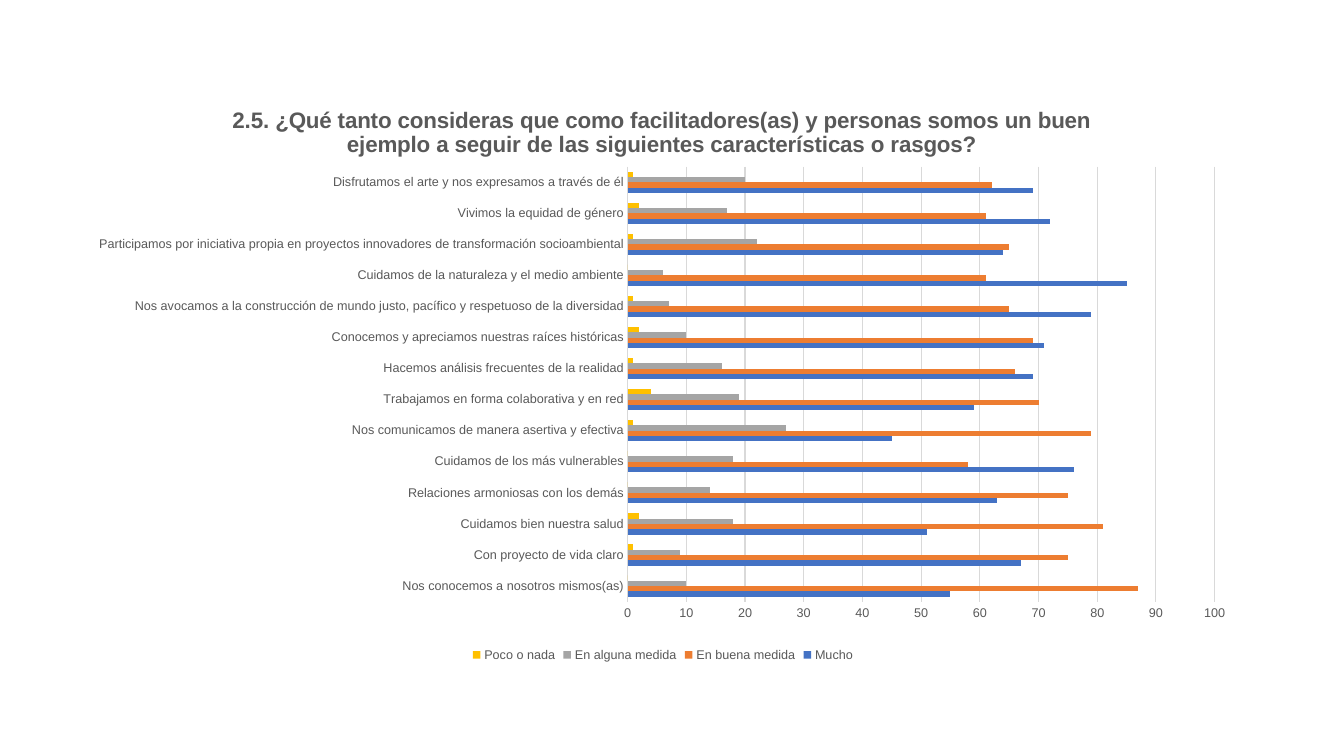
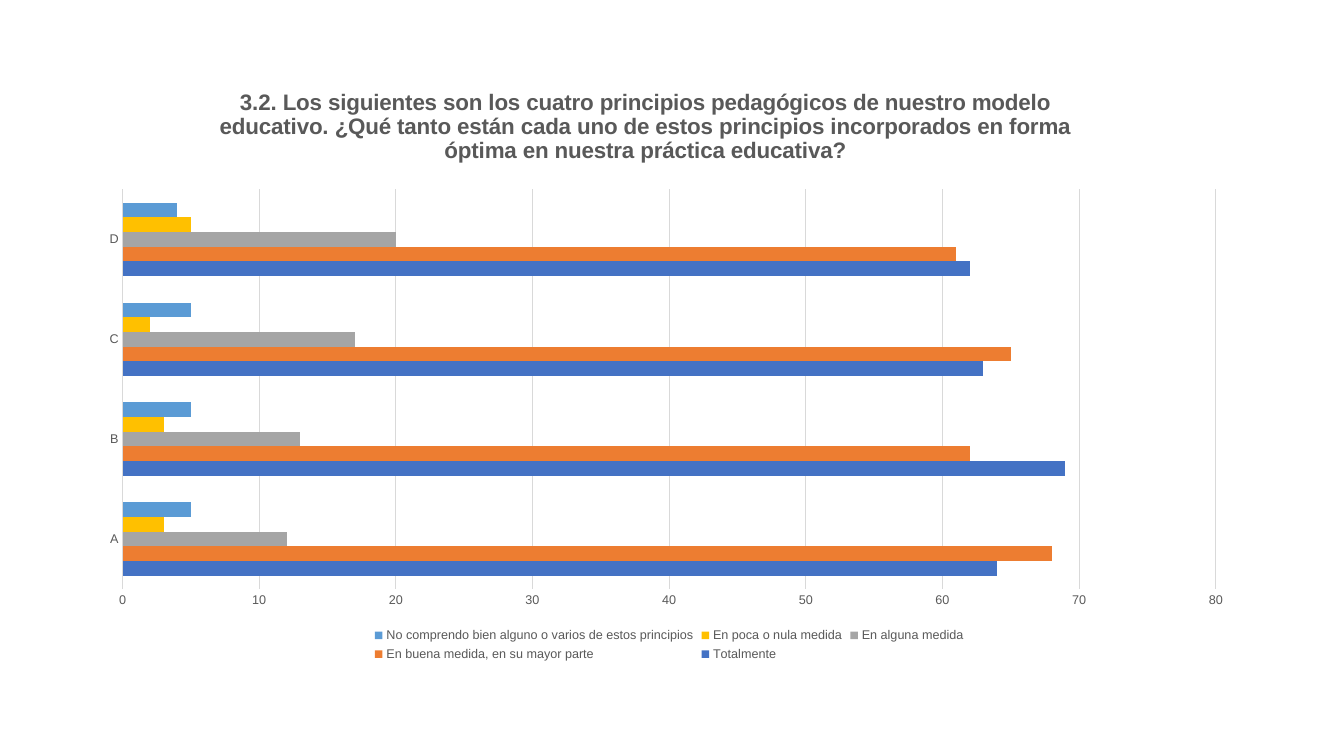
import pptx
import pptx.chart.data
import pptx.dml.color
import pptx.enum.chart
import pptx.oxml
import pptx.oxml.ns
import pptx.util
from pptx.util import Cm

FONT = "Arial"
TEXT = "595959"
RULE = "D9D9D9"
SERIES_COLORS = ["4472C4", "ED7D31", "A5A5A5", "FFC000", "5B9BD5"]


def color(hex_code):
    return pptx.dml.color.RGBColor.from_string(hex_code)


def style_font(font, size, hex_code, bold=False):
    font.name = FONT
    font.size = pptx.util.Pt(size)
    font.bold = bold
    font.color.rgb = color(hex_code)


def style_rule(line):
    line.color.rgb = color(RULE)
    line.width = pptx.util.Pt(0.75)


def set_layout(parent, index, target=None, **fractions):
    for old in parent.findall(pptx.oxml.ns.qn("c:layout")):
        parent.remove(old)
    parts = [f'<c:layoutTarget val="{target}"/>'] if target else []
    parts += [f'<c:{edge}Mode val="edge"/>' for edge in ("x", "y")]
    parts += [f'<c:{key} val="{value}"/>' for key, value in fractions.items()]
    parent.insert(index, pptx.oxml.parse_xml(
        f'<c:layout {pptx.oxml.ns.nsdecls("c")}><c:manualLayout>'
        + "".join(parts) + "</c:manualLayout></c:layout>"))


class SurveyDeck:
    def __init__(self):
        self.deck = pptx.Presentation()
        self.deck.slide_width = Cm(33.87)
        self.deck.slide_height = Cm(19.05)
        self.slide = None

    def add_slide(self):
        self.slide = self.deck.slides.add_slide(self.deck.slide_layouts[6])

    def add_bars(self, box, categories, answers, maximum, plot_area):
        data = pptx.chart.data.CategoryChartData()
        data.categories = categories
        for answer, counts in answers.items():
            data.add_series(answer, counts)
        chart = self.slide.shapes.add_chart(
            pptx.enum.chart.XL_CHART_TYPE.BAR_CLUSTERED,
            *(Cm(length) for length in box), data).chart
        style_font(chart.font, 10, "000000")
        bars = chart.plots[0]
        bars.gap_width = 182
        bars.vary_by_categories = False
        for series, fill in zip(bars.series, SERIES_COLORS):
            series.format.fill.solid()
            series.format.fill.fore_color.rgb = color(fill)
        self.style_axes(chart, maximum)
        chart.has_legend = True
        chart.legend.position = pptx.enum.chart.XL_LEGEND_POSITION.BOTTOM
        chart.legend.include_in_layout = False
        style_font(chart.legend.font, 9, TEXT)
        set_layout(bars._element.getparent(), 0, "inner", **plot_area)
        return chart

    def style_axes(self, chart, maximum):
        for axis in (chart.category_axis, chart.value_axis):
            axis.major_tick_mark = pptx.enum.chart.XL_TICK_MARK.NONE
            axis.minor_tick_mark = pptx.enum.chart.XL_TICK_MARK.NONE
            style_font(axis.tick_labels.font, 9, TEXT)
        style_rule(chart.category_axis.format.line)
        counts = chart.value_axis
        counts.minimum_scale = 0
        counts.maximum_scale = maximum
        counts.major_unit = 10
        counts.has_major_gridlines = True
        style_rule(counts.major_gridlines.format.line)
        counts.format.line.fill.background()

    def add_question(self, chart, question, x, y):
        chart.has_title = True
        title = chart.chart_title
        run = title.text_frame.paragraphs[0].add_run()
        run.text = question
        style_font(run.font, 16, TEXT, bold=True)
        title.include_in_layout = False
        set_layout(title._element, 1, x=x, y=y)

    def save(self):
        self.deck.save("out.pptx")


def main():
    survey = SurveyDeck()

    survey.add_slide()
    traits = survey.add_bars(
        (1.91, 1.98, 29.59, 14.81),
        [
            "Nos conocemos a nosotros mismos(as)",
            "Con proyecto de vida claro",
            "Cuidamos bien nuestra salud",
            "Relaciones armoniosas con los demás",
            "Cuidamos de los más vulnerables",
            "Nos comunicamos de manera asertiva y efectiva",
            "Trabajamos en forma colaborativa y en red",
            "Hacemos análisis frecuentes de la realidad",
            "Conocemos y apreciamos nuestras raíces históricas",
            "Nos avocamos a la construcción de mundo justo, pacífico y "
            "respetuoso de la diversidad",
            "Cuidamos de la naturaleza y el medio ambiente",
            "Participamos por iniciativa propia en proyectos innovadores de "
            "transformación socioambiental",
            "Vivimos la equidad de género",
            "Disfrutamos el arte y nos expresamos a través de él",
        ],
        {
            "Mucho": [55, 67, 51, 63, 76, 45, 59, 69, 71, 79, 85, 64, 72, 69],
            "En buena medida": [87, 75, 81, 75, 58, 79, 70, 66, 69, 65, 61, 65, 61, 62],
            "En alguna medida": [10, 9, 18, 14, 18, 27, 19, 16, 10, 7, 6, 22, 17, 20],
            "Poco o nada": [0, 1, 2, 0, 0, 1, 4, 1, 2, 1, 0, 1, 2, 1],
        },
        100, dict(x=0.47, y=0.15, w=0.5, h=0.74))
    survey.add_question(
        traits,
        "2.5. ¿Qué tanto consideras que como facilitadores(as) y personas somos "
        "un buen ejemplo a seguir de las siguientes características o rasgos?",
        0.13, 0.04)

    survey.add_slide()
    principles = survey.add_bars(
        (2.21, 1.96, 29.31, 14.81),
        ["A", "B", "C", "D"],
        {
            "Totalmente": [64, 69, 63, 62],
            "En buena medida, en su mayor parte": [68, 62, 65, 61],
            "En alguna medida": [12, 13, 17, 20],
            "En poca o nula medida": [3, 3, 2, 5],
            "No comprendo bien alguno o varios de estos principios": [5, 5, 5, 4],
        },
        80, dict(x=0.03, y=0.19, w=0.94, h=0.68))
    survey.add_question(
        principles,
        "3.2. Los siguientes son los cuatro principios pedagógicos de nuestro "
        "modelo educativo. ¿Qué tanto están cada uno de estos principios "
        "incorporados en forma óptima en nuestra práctica educativa?",
        0.11, 0.01)

    survey.save()


if __name__ == "__main__":
    main()
